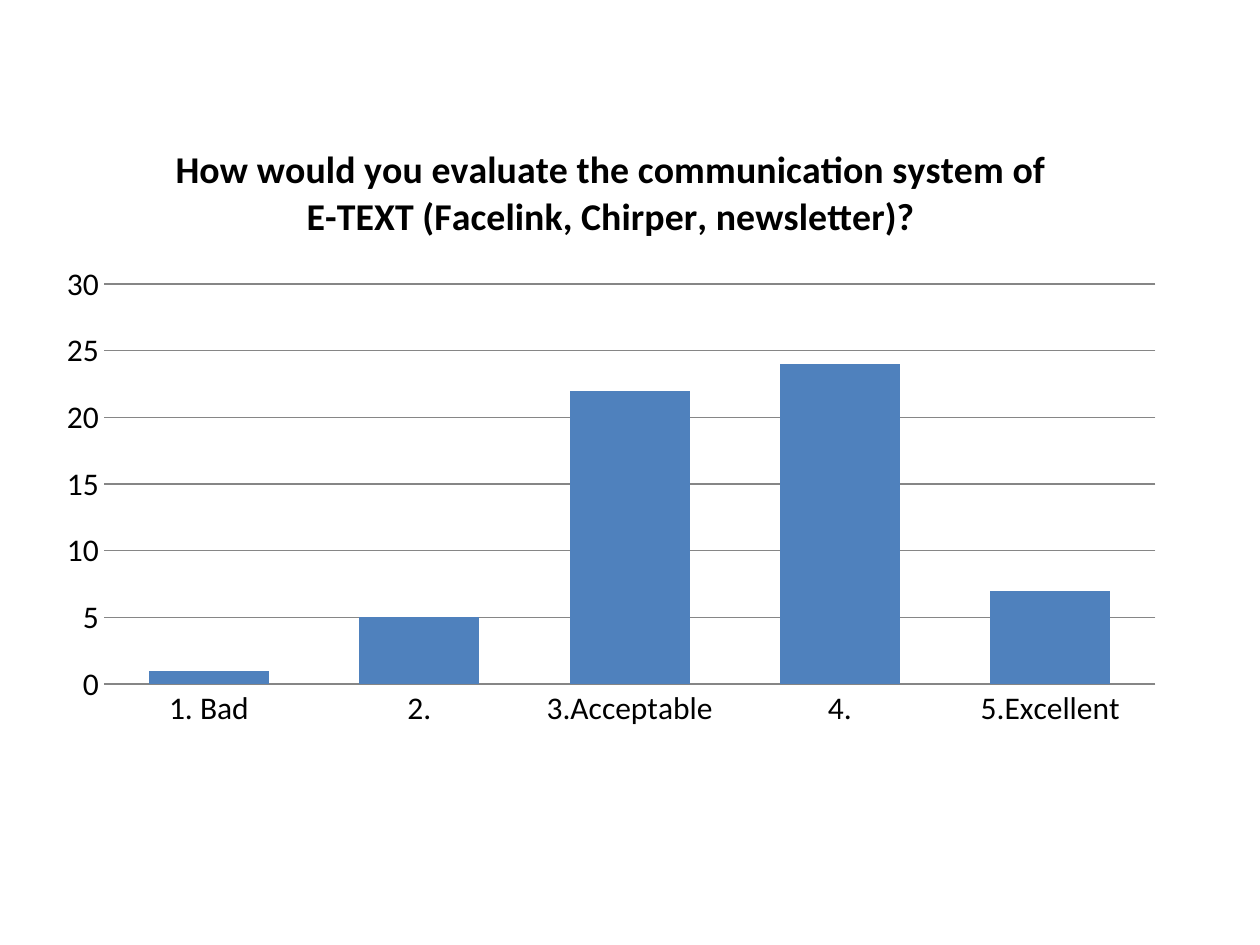
import pptx
import pptx.chart.data
import pptx.dml.color
import pptx.enum.chart
import pptx.util
from pptx.util import Cm

FONT = "Calibri"
TITLE = "How would you evaluate the communication system of E-TEXT (Facelink, Chirper, newsletter)?"
VOTES = {"1. Bad": 1, "2.": 5, "3.Acceptable": 22, "4.": 24, "5.Excellent": 7}


def tint(color, code):
    color.rgb = pptx.dml.color.RGBColor.from_string(code)


def style(font, size, bold=False):
    font.name = FONT
    font.size = pptx.util.Pt(size)
    font.bold = bold
    tint(font.color, "000000")


def rule(line):
    line.width = pptx.util.Pt(0.75)
    tint(line.color, "868686")


def add_title(chart):
    chart.has_title = True
    chart.chart_title.include_in_layout = False
    run = chart.chart_title.text_frame.paragraphs[0].add_run()
    run.text = TITLE
    style(run.font, 21.6, True)


def add_votes(slide, left, top, width, height):
    data = pptx.chart.data.CategoryChartData()
    data.categories = list(VOTES)
    data.add_series("Series 1", list(VOTES.values()))
    kind = pptx.enum.chart.XL_CHART_TYPE.COLUMN_CLUSTERED
    chart = slide.shapes.add_chart(kind, left, top, width, height, data).chart
    style(chart.font, 18)
    chart.has_legend = False
    add_title(chart)

    plot = chart.plots[0]
    plot.vary_by_categories = False
    plot.gap_width = 75
    plot.overlap = -25
    fill = plot.series[0].format.fill
    fill.solid()
    tint(fill.fore_color, "4F81BD")

    for axis in (chart.category_axis, chart.value_axis):
        axis.major_tick_mark = pptx.enum.chart.XL_TICK_MARK.NONE
        axis.minor_tick_mark = pptx.enum.chart.XL_TICK_MARK.NONE
    rule(chart.category_axis.format.line)
    scale = chart.value_axis
    scale.minimum_scale, scale.maximum_scale, scale.major_unit = 0, 30, 5
    scale.has_major_gridlines = True
    rule(scale.major_gridlines.format.line)
    scale.format.line.fill.background()


def main():
    deck = pptx.Presentation()
    deck.slide_width, deck.slide_height = Cm(25.4), Cm(19.05)
    slide = deck.slides.add_slide(deck.slide_layouts[6])
    add_votes(slide, Cm(0.89), Cm(2.34), Cm(22.86), Cm(12.57))
    deck.save("out.pptx")


if __name__ == "__main__":
    main()
